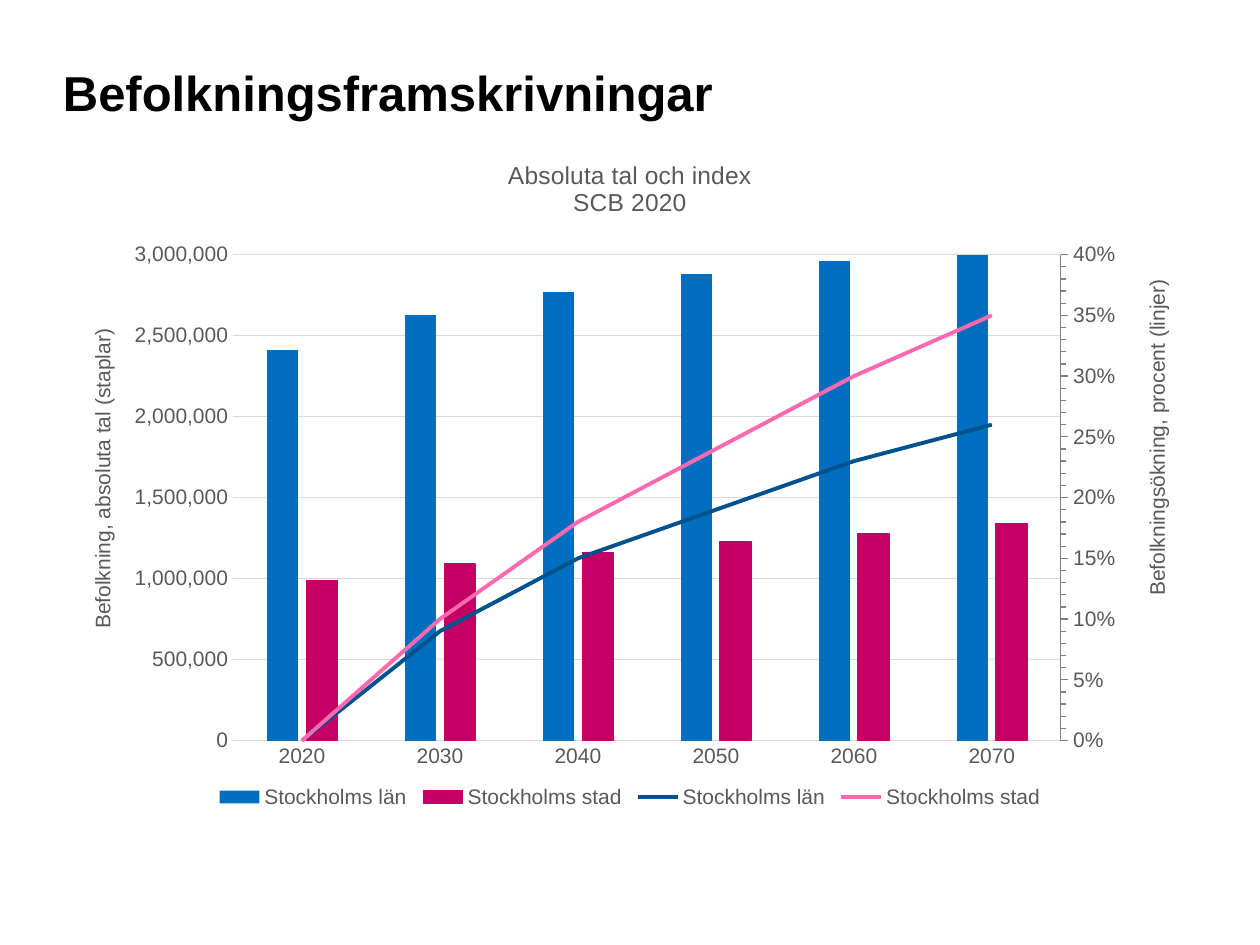
"""Build a slide with population projections as columns and growth lines."""
from copy import deepcopy
from dataclasses import dataclass

from pptx import Presentation
from pptx.chart.axis import CategoryAxis, ValueAxis
from pptx.chart.data import CategoryChartData
from pptx.dml.color import RGBColor
from pptx.enum.chart import XL_CHART_TYPE as ChartType
from pptx.enum.chart import XL_LEGEND_POSITION as LegendPosition
from pptx.enum.chart import XL_MARKER_STYLE as MarkerStyle
from pptx.enum.chart import XL_TICK_MARK as TickMark
from pptx.oxml import parse_xml
from pptx.oxml.ns import nsdecls, qn
from pptx.util import Cm, Pt


@dataclass(frozen=True)
class Theme:
    font: str = "Arial"
    heading: RGBColor = RGBColor.from_string("000000")
    muted: RGBColor = RGBColor.from_string("595959")
    grid: RGBColor = RGBColor.from_string("D9D9D9")
    scale: RGBColor = RGBColor.from_string("808080")
    county: RGBColor = RGBColor.from_string("006EBF")
    city: RGBColor = RGBColor.from_string("C40064")
    county_growth: RGBColor = RGBColor.from_string("00528F")
    city_growth: RGBColor = RGBColor.from_string("FB6AAE")
    heading_size: int = 28
    chart_title_size: int = 14
    label_size: int = 12
    thin: float = 0.75
    thick: float = 2.25


theme = Theme()


def write(frame, text, size=theme.label_size, color=theme.muted, bold=False):
    frame.text = text
    for paragraph in frame.paragraphs:
        for run in paragraph.runs:
            run.font.name, run.font.size, run.font.bold = theme.font, Pt(size), bold
            run.font.color.rgb = color


def place(element, index, inner=False, **fractions):
    for old in element.findall(qn("c:layout")):
        element.remove(old)
    target = '<c:layoutTarget val="inner"/>' if inner else ""
    modes = "".join(f'<c:{side}Mode val="edge"/>' for side in "xy")
    values = "".join(f'<c:{key} val="{value}"/>' for key, value in fractions.items())
    element.insert(index, parse_xml(
        f"<c:layout {nsdecls('c')}><c:manualLayout>{target}{modes}{values}"
        "</c:manualLayout></c:layout>"))


presentation = Presentation()
presentation.slide_width, presentation.slide_height = Cm(25.4), Cm(19.05)
slide = presentation.slides.add_slide(presentation.slide_layouts[6])

heading = slide.shapes.add_textbox(Cm(1.27), Cm(1.27), Cm(22.86), Cm(2.31)).text_frame
heading.word_wrap = True
heading.margin_left = heading.margin_right = heading.margin_top = heading.margin_bottom = 0
write(heading, "Befolkningsframskrivningar", size=theme.heading_size,
      color=theme.heading, bold=True)

populations = [
    ("Stockholms län", [2410000, 2630000, 2770000, 2880000, 2960000, 3030000]),
    ("Stockholms stad", [990000, 1090000, 1160000, 1230000, 1280000, 1340000]),
]
growth_rates = [
    ("Stockholms län", [0, 0.09, 0.15, 0.19, 0.23, 0.26]),
    ("Stockholms stad", [0, 0.1, 0.18, 0.24, 0.3, 0.35]),
]
projections = CategoryChartData()
projections.categories = [str(year) for year in range(2020, 2071, 10)]
for rows, number_format in ((populations, "#,##0"), (growth_rates, "0%")):
    for region, values in rows:
        projections.add_series(region, values, number_format)

chart = slide.shapes.add_chart(ChartType.COLUMN_CLUSTERED, Cm(1.27), Cm(2.72),
                               Cm(22.86), Cm(14.2), projections).chart
chart.font.name, chart.font.size = theme.font, Pt(theme.label_size)
chart.font.color.rgb = theme.muted
chart.has_title = True
write(chart.chart_title.text_frame, "Absoluta tal och index\nSCB 2020",
      size=theme.chart_title_size)

columns = chart.plots[0]
columns.gap_width, columns.overlap, columns.vary_by_categories = 219, -27, False

years = chart.category_axis
years.major_tick_mark = TickMark.NONE
years.format.line.color.rgb, years.format.line.width = theme.grid, Pt(theme.thin)

population = chart.value_axis
population.minimum_scale, population.maximum_scale = 0, 3000000
population.major_unit = 500000
population.major_tick_mark = TickMark.NONE
population.tick_labels.number_format = "#,##0"
population.tick_labels.number_format_is_linked = False
gridline = population.major_gridlines.format.line
gridline.color.rgb, gridline.width = theme.grid, Pt(theme.thin)
population.format.line.fill.background()
write(population.axis_title.text_frame, "Befolkning, absoluta tal (staplar)")

plot_area = columns._element.getparent()
growth_lines = parse_xml(
    f'<c:lineChart {nsdecls("c")}><c:grouping val="standard"/><c:varyColors val="0"/>'
    '<c:marker val="1"/><c:axId val="5001"/><c:axId val="5002"/></c:lineChart>')
columns._element.addnext(growth_lines)
for offset, series in enumerate(columns._element.findall(qn("c:ser"))[2:]):
    for bar_setting in series.findall(qn("c:invertIfNegative")):
        series.remove(bar_setting)
    growth_lines.insert(2 + offset, series)

growth_element, hidden_years = deepcopy(population._element), deepcopy(years._element)
population._element.addnext(growth_element)
growth_element.addnext(hidden_years)
for element, own, other in ((growth_element, "5002", "5001"), (hidden_years, "5001", "5002")):
    element.find(qn("c:axId")).set("val", own)
    element.find(qn("c:crossAx")).set("val", other)
growth_element.find(qn("c:axPos")).set("val", "r")
growth_element.find(qn("c:crosses")).set("val", "max")
CategoryAxis(hidden_years).visible = False

growth = ValueAxis(growth_element)
growth.has_major_gridlines = False
growth.minimum_scale, growth.maximum_scale = 0, 0.4
growth.major_unit, growth.minor_unit = 0.05, 0.01
growth.major_tick_mark = TickMark.OUTSIDE
growth.minor_tick_mark = TickMark.OUTSIDE
growth.tick_labels.number_format = "0%"
growth.format.line.color.rgb, growth.format.line.width = theme.scale, Pt(theme.thin)
write(growth.axis_title.text_frame, "Befolkningsökning, procent (linjer)")

for axis, left, top in ((population, 0.02, 0.27), (growth, 0.95, 0.2)):
    body = axis.axis_title.text_frame._txBody.bodyPr
    body.set("rot", "-5400000")
    body.set("vert", "horz")
    place(axis._element.find(qn("c:title")), 1, x=left, y=top)

column_plot, line_plot = chart.plots
for series, color in zip(column_plot.series, (theme.county, theme.city)):
    series.invert_if_negative = False
    series.format.fill.solid()
    series.format.fill.fore_color.rgb = color
column_plot.series[1].format.line.color.rgb = theme.city
column_plot.series[1].format.line.width = Pt(theme.thin)
for series, color in zip(line_plot.series, (theme.county_growth, theme.city_growth)):
    series.smooth = False
    series.marker.style = MarkerStyle.NONE
    series.format.line.color.rgb, series.format.line.width = color, Pt(theme.thick)

chart.has_legend = True
chart.legend.position = LegendPosition.BOTTOM
chart.legend.include_in_layout = False
place(chart.legend._element, 1, x=0.13, y=0.92, w=0.74, h=0.04)
place(plot_area, 0, inner=True, x=0.15, y=0.17, w=0.73, h=0.69)

presentation.save("out.pptx")
